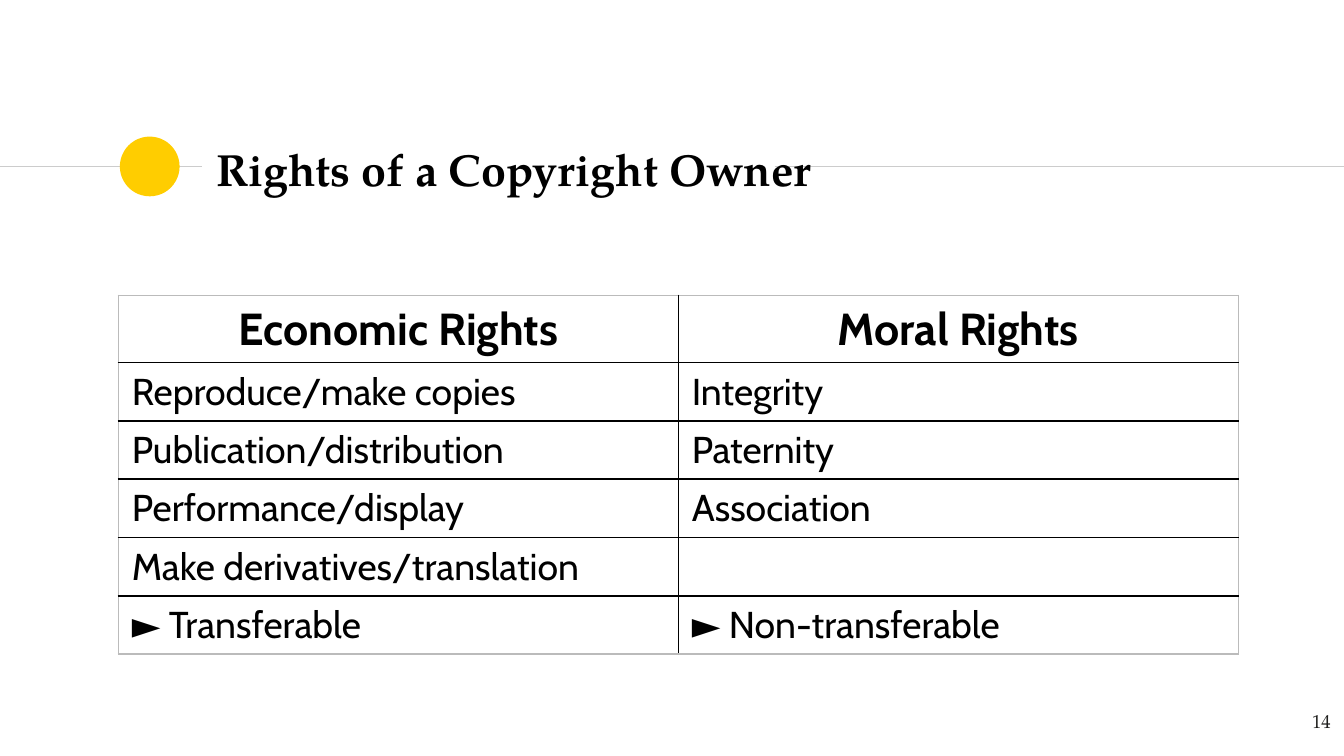
"""Build a slide that compares the economic and moral rights of a copyright owner."""
from dataclasses import dataclass

from lxml import etree
from pptx import Presentation
from pptx import util as u
from pptx.dml.color import RGBColor
from pptx.enum import shapes, text
from pptx.oxml import ns

Pt = u.Pt
AL = text.PP_ALIGN
MID = text.MSO_ANCHOR.MIDDLE


@dataclass(frozen=True)
class Theme:
    ink: str = "000000"
    soft: str = "1D1D1B"
    rule: str = "CCCCCC"
    edge: str = "BBBBBB"
    dot: str = "FFCD00"
    serif: str = "TeX Gyre Pagella"
    sans: str = "Cabin"
    head: int = 24
    body: int = 20
    note: int = 10


def write(frame, words, *, size, font, color, bold=False, align=AL.LEFT):
    para = frame.paragraphs[0]
    para.alignment = align
    para.font.size = Pt(size)
    if not words:
        return
    run = para.add_run()
    run.text = words
    face = run.font
    face.name, face.size, face.bold = font, Pt(size), bold
    face.color.rgb = RGBColor.from_string(color)


def border(cell, sides):
    props = cell._tc.get_or_add_tcPr()
    for i, (side, color) in enumerate(sides.items()):
        line = etree.Element(ns.qn(f"a:ln{side}"), w=str(Pt(1)))
        fill = etree.SubElement(line, ns.qn("a:solidFill"))
        etree.SubElement(fill, ns.qn("a:srgbClr"), val=color)
        props.insert(i, line)


class Deck:
    def __init__(self, theme):
        self.theme = theme
        self.prs = Presentation()
        self.prs.slide_width, self.prs.slide_height = Pt(720), Pt(405)
        self.slide = self.prs.slides.add_slide(self.prs.slide_layouts[6])

    def line(self, x1, x2, y):
        rule = self.slide.shapes.add_connector(
            shapes.MSO_CONNECTOR.STRAIGHT, Pt(x1), Pt(y), Pt(x2), Pt(y))
        rule.line.color.rgb = RGBColor.from_string(self.theme.rule)
        rule.line.width = Pt(0.75)
        etree.SubElement(rule._element.spPr, ns.qn("a:effectLst"))

    def dot(self, x, y, size):
        disc = self.slide.shapes.add_shape(
            shapes.MSO_SHAPE.OVAL, Pt(x), Pt(y), Pt(size), Pt(size))
        disc.shadow.inherit = False
        disc.fill.solid()
        disc.fill.fore_color.rgb = RGBColor.from_string(self.theme.dot)
        disc.line.fill.background()

    def label(self, words, x, y, w, h, anchor=text.MSO_ANCHOR.TOP, **style):
        frame = self.slide.shapes.add_textbox(Pt(x), Pt(y), Pt(w), Pt(h)).text_frame
        frame.word_wrap = True
        frame.vertical_anchor = anchor
        frame.margin_left = frame.margin_right = Pt(7.2)
        frame.margin_top = frame.margin_bottom = Pt(7.2)
        write(frame, words, **style)

    def table(self, rows, x, y, wide, tall, first):
        t = self.theme
        last, end = len(rows) - 1, len(rows[0]) - 1
        high = first + tall * last
        grid = self.slide.shapes.add_table(
            last + 1, end + 1, Pt(x), Pt(y), Pt(wide * (end + 1)), Pt(high)).table
        grid.first_row = grid.horz_banding = False
        for col in grid.columns:
            col.width = Pt(wide)
        for r, row in enumerate(rows):
            grid.rows[r].height = Pt(tall if r else first)
            for c, words in enumerate(row):
                cell = grid.cell(r, c)
                cell.fill.background()
                outer = {"L": c == 0, "R": c == end, "T": r == 0, "B": r == last}
                border(cell, {s: t.edge if out else t.ink for s, out in outer.items()})
                write(cell.text_frame, words, font=t.sans, color=t.ink,
                      size=t.body if r else t.head, bold=r == 0,
                      align=AL.LEFT if r else AL.CENTER)


def main():
    t = Theme()
    deck = Deck(t)
    deck.line(0, 108, 89.2)
    deck.dot(64.2, 73.2, 32)
    deck.line(415, 720, 89.2)
    deck.label("Rights of a Copyright Owner", 108.7, 73, 446.4, 34.6, anchor=MID,
               size=t.head, font=t.serif, color=t.ink, bold=True)
    deck.label("14", 676.8, 374, 43.2, 31, size=t.note, font=t.serif,
               color=t.soft, align=AL.RIGHT)
    deck.table([
        ("Economic Rights", "Moral Rights"),
        ("Reproduce/make copies", "Integrity"),
        ("Publication/distribution", "Paternity"),
        ("Performance/display", "Association"),
        ("Make derivatives/translation", ""),
        ("► Transferable", "► Non-transferable"),
    ], x=63.4, y=158.2, wide=300, tall=29.5, first=34)
    deck.prs.save("out.pptx")


if __name__ == "__main__":
    main()
